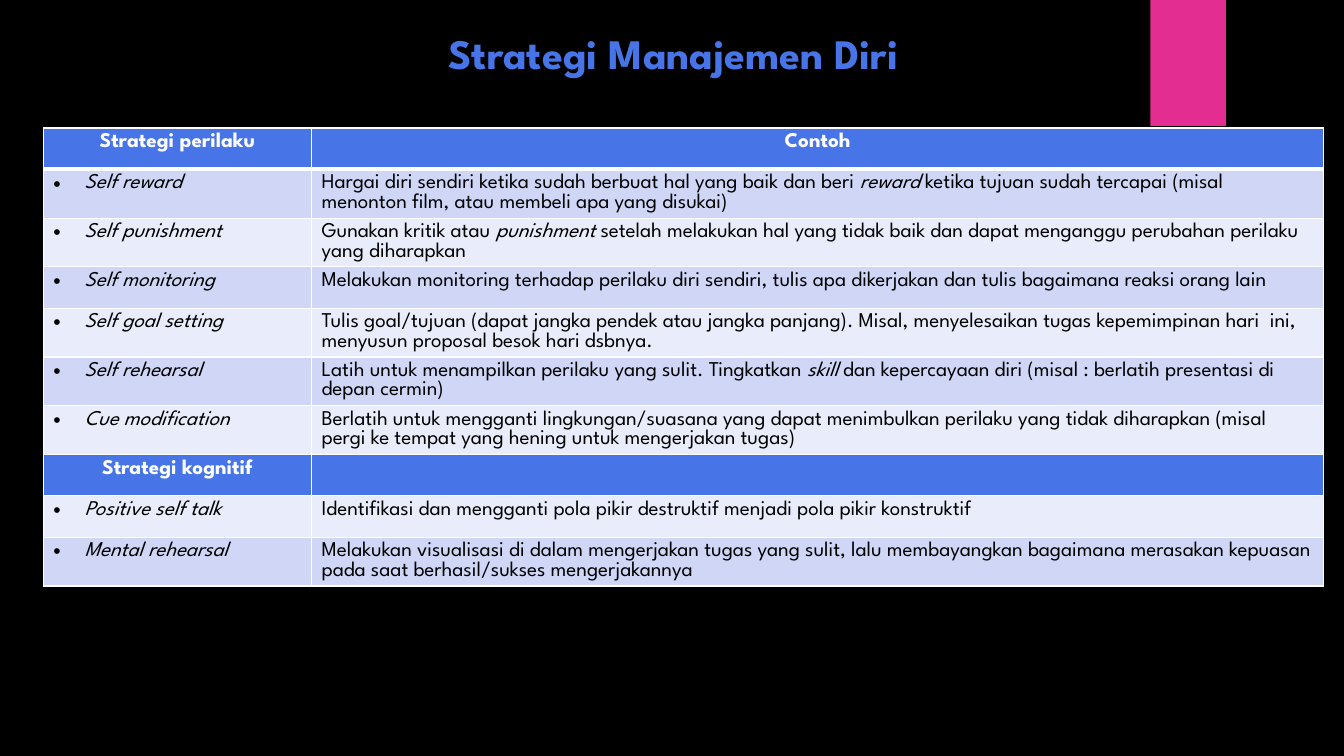
from lxml import etree
from pptx import Presentation
from pptx.dml.color import RGBColor
from pptx.enum.shapes import MSO_SHAPE
from pptx.enum.text import MSO_ANCHOR, PP_ALIGN
from pptx.oxml.ns import qn
from pptx.util import Inches, Pt

RECTANGLE = MSO_SHAPE.RECTANGLE
OVAL = MSO_SHAPE.OVAL
MIDDLE = MSO_ANCHOR.MIDDLE
CENTER = PP_ALIGN.CENTER

FONT = "League Spartan"
LINE_HEIGHT = 0.92
COLORS = {
    "background": "000000",
    "accent": "E32D91",
    "glow": "EE81BD",
    "heading": "4775E7",
    "odd_band": "CFD6F6",
    "even_band": "E9ECFA",
    "body": "000000",
    "light": "FFFFFF",
}
GLOW_STOPS = ((0, 7), (36, 6), (69, 0))
STRATEGIES = [
    ("Strategi perilaku", "Contoh"),
    ("*Self reward*", "Hargai diri sendiri ketika sudah berbuat hal yang baik dan beri *reward *ketika tujuan sudah tercapai (misal menonton film, atau membeli apa yang disukai)"),
    ("*Self punishment*", "Gunakan kritik atau *punishment *setelah melakukan hal yang tidak baik dan dapat menganggu perubahan perilaku yang diharapkan"),
    ("*Self monitoring*", "Melakukan monitoring terhadap perilaku diri sendiri, tulis apa dikerjakan dan tulis bagaimana reaksi orang lain"),
    ("*Self goal setting*", "Tulis goal/tujuan (dapat jangka pendek atau jangka panjang). Misal, menyelesaikan tugas kepemimpinan hari  ini, menyusun proposal besok hari dsbnya."),
    ("*Self rehearsal*", "Latih untuk menampilkan perilaku yang sulit. Tingkatkan *skill *dan kepercayaan diri (misal : berlatih presentasi di depan cermin)"),
    ("*Cue modification*", "Berlatih untuk mengganti lingkungan/suasana yang dapat menimbulkan perilaku yang tidak diharapkan (misal pergi ke tempat yang hening untuk mengerjakan tugas)"),
    ("Strategi kognitif", ""),
    ("*Positive self talk*", "Identifikasi dan mengganti pola pikir destruktif menjadi pola pikir konstruktif"),
    ("*Mental rehearsal*", "Melakukan visualisasi di dalam mengerjakan tugas yang sulit, lalu membayangkan bagaimana merasakan kepuasan pada saat berhasil/sukses mengerjakannya"),
]


def rgb(role):
    """Return the colour of a role."""
    return RGBColor.from_string(COLORS[role])


def style_paragraph(paragraph, size, color, bold):
    """Set the font and line height of a whole paragraph."""
    font = paragraph.font
    font.name, font.size, font.bold = FONT, Pt(size), bold
    font.color.rgb = rgb(color)
    paragraph.line_spacing = Pt(size * LINE_HEIGHT)


def add_glow(slide, left, top, diameter):
    """Draw the faint round glow that fades outwards."""
    glow = slide.shapes.add_shape(OVAL, left, top, diameter, diameter)
    glow.shadow.inherit = False
    glow.line.fill.background()
    gradient = etree.Element(qn("a:gradFill"))
    stops = etree.SubElement(gradient, qn("a:gsLst"))
    for position, opacity in GLOW_STOPS:
        stop = etree.SubElement(stops, qn("a:gs"), pos=str(position * 1000))
        color = etree.SubElement(stop, qn("a:srgbClr"), val=COLORS["glow"])
        etree.SubElement(color, qn("a:alpha"), val=str(opacity * 1000))
    circle = etree.SubElement(gradient, qn("a:path"), path="circle")
    center = dict.fromkeys("ltrb", "50000")
    etree.SubElement(circle, qn("a:fillToRect"), center)
    glow._element.spPr.find(qn("a:prstGeom")).addnext(gradient)


def add_ribbon(slide, left, top, width, height):
    """Draw the pink ribbon hanging from the top edge."""
    ribbon = slide.shapes.add_shape(RECTANGLE, left, top, width, height)
    ribbon.shadow.inherit = False
    ribbon.fill.solid()
    ribbon.fill.fore_color.rgb = rgb("accent")
    ribbon.line.fill.background()


def add_title(slide, left, top, width, height):
    """Write the centred slide title."""
    frame = slide.shapes.add_textbox(left, top, width, height).text_frame
    frame.word_wrap = True
    frame.vertical_anchor = MIDDLE
    frame.margin_bottom = Inches(0.33)
    title = frame.paragraphs[0]
    title.text = "Strategi Manajemen Diri"
    title.alignment = CENTER
    style_paragraph(title, 30, "heading", True)


def add_borders(cell, top, bottom):
    """Draw white borders, with top and bottom widths in points."""
    properties = cell._tc.get_or_add_tcPr()
    for side, width in (("L", 1), ("R", 1), ("T", top), ("B", bottom)):
        line = etree.SubElement(properties, qn(f"a:ln{side}"), w=str(Pt(width)))
        fill = etree.SubElement(line, qn("a:solidFill"))
        etree.SubElement(fill, qn("a:srgbClr"), val=COLORS["light"])


def add_bullet(paragraph):
    """Give a paragraph a hanging bullet."""
    properties = paragraph._p.get_or_add_pPr()
    indent = Inches(0.31)
    properties.set("marL", str(indent))
    properties.set("indent", str(-indent))
    bullet = etree.Element(qn("a:buChar"), char="•")
    properties.insert(0, bullet)
    bullet.addprevious(etree.Element(qn("a:buFont"), typeface="Arial"))


def fill_cell(cell, text, row, column):
    """Fill one strategy cell; asterisks enclose italic words."""
    is_heading = not STRATEGIES[row][0].startswith("*")
    add_borders(cell, 3 if row == 1 else 1, 3 if row == 0 else 1)
    band = "odd_band" if row % 2 else "even_band"
    cell.fill.solid()
    cell.fill.fore_color.rgb = rgb("heading" if is_heading else band)
    paragraph = cell.text_frame.paragraphs[0]
    if is_heading:
        paragraph.alignment = CENTER
    elif column == 0:
        add_bullet(paragraph)
    style_paragraph(paragraph, 15, "light" if is_heading else "body", is_heading)
    for index, words in enumerate(text.split("*")):
        if words:
            run = paragraph.add_run()
            run.text = words
            run.font.italic = index % 2 == 1


def add_strategies(slide, left, top, width, row_height):
    """Build the table of strategies and examples."""
    count = len(STRATEGIES)
    table = slide.shapes.add_table(count, 2, left, top, width, row_height * count).table
    table.columns[0].width = Inches(2.66)
    table.columns[1].width = width - Inches(2.66)
    for row, entries in enumerate(STRATEGIES):
        for column, text in enumerate(entries):
            fill_cell(table.cell(row, column), text, row, column)


def main():
    """Build and save the slide."""
    deck = Presentation()
    deck.slide_width, deck.slide_height = Inches(13.33), Inches(7.5)
    slide = deck.slides.add_slide(deck.slide_layouts[6])
    slide.background.fill.solid()
    slide.background.fill.fore_color.rgb = rgb("background")
    margin = Inches(0.43)
    add_glow(slide, Inches(9.41), Inches(1.83), Inches(3.08))
    add_ribbon(slide, Inches(11.41), 0, Inches(0.75), Inches(1.25))
    add_title(slide, margin, Inches(0.29), Inches(12.5), Inches(0.86))
    add_strategies(slide, margin, Inches(1.27), Inches(12.7), Inches(0.41))
    deck.save("out.pptx")


if __name__ == "__main__":
    main()
